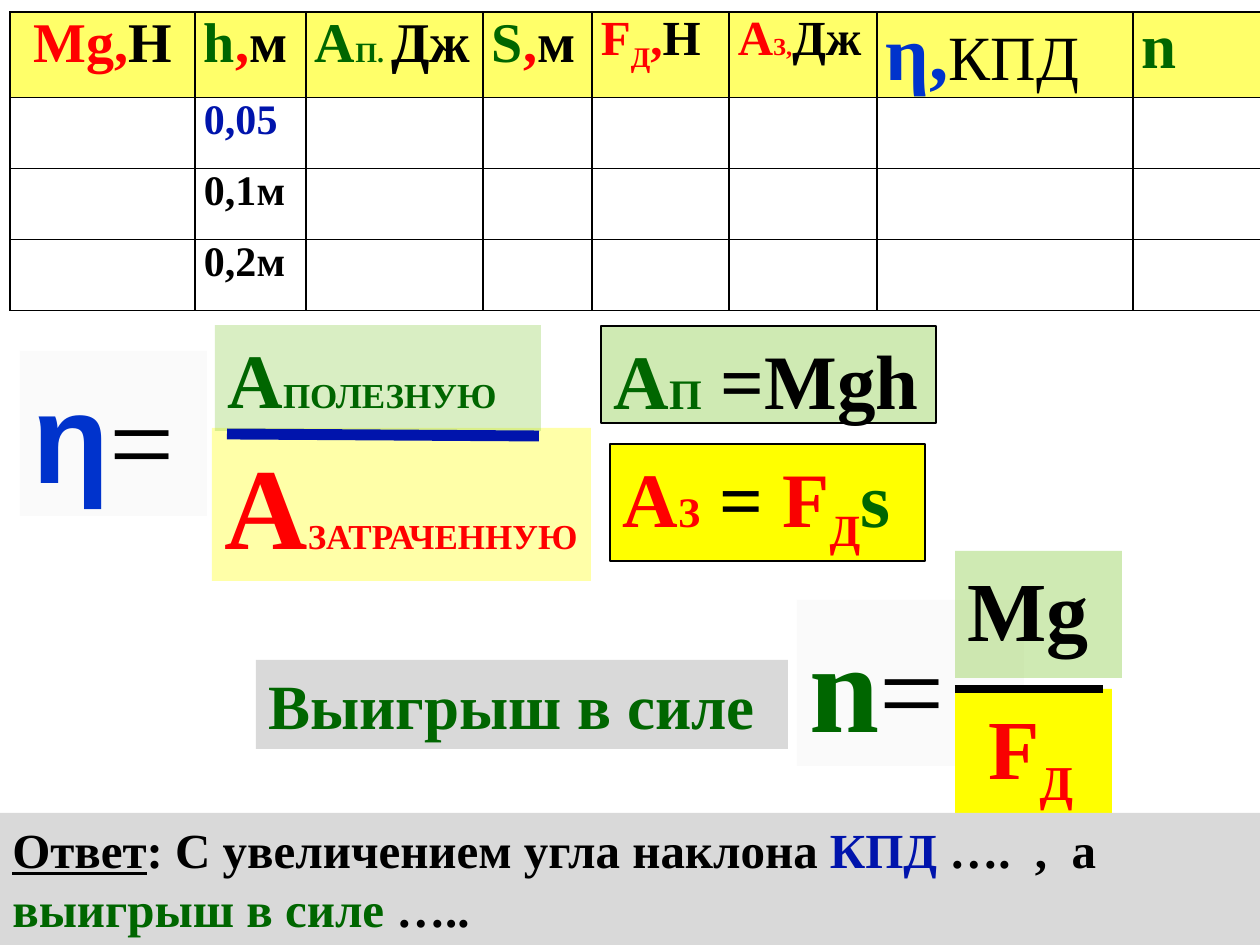
from lxml.etree import SubElement
from pptx import Presentation
from pptx.dml.color import RGBColor
from pptx.enum.shapes import MSO_CONNECTOR, MSO_SHAPE
from pptx.enum.text import MSO_ANCHOR, PP_ALIGN
from pptx.oxml.ns import qn
from pptx.util import Pt

SERIF = "Times New Roman"
RED, GREEN, BLUE, BLACK = "FF0000", "006600", "0014AC", "000000"
SKY, YELLOW, LIME, GREY, PALE = "0033CC", "FFFF00", "92D050", "D9D9D9", "F2F2F2"

# Run: text, size, colour, then optional style marks
COLS = [185, 111, 177, 109, 137, 148, 256, 128]
ROWS = [69, 71, 71, 71]
HEAD = [
    [("Mg,", 32, RED), ("Н", 32, BLACK)],
    [("h", 32, GREEN), (",", 32, RED), ("м", 32, BLACK)],
    [("A", 32, GREEN), ("П. ", 16, GREEN), ("Дж", 32, BLACK)],
    [("S", 32, GREEN), (",", 32, RED), ("м", 32, BLACK)],
    [("F", 28, RED), ("Д", 28, RED, "sub"), (",", 28, RED), ("Н", 28, BLACK)],
    [("A", 28, RED), ("З,", 14, RED), ("Дж", 28, BLACK)],
    [("η,", 44, SKY), ("КПД", 36, BLACK, "thin")],
    [("n", 36, GREEN)],
]
HEIGHTS = [("0,05", 24, BLUE), ("0,1м", 24, BLACK), ("0,2м", 24, BLACK)]

# Box: left, top, width, height, fill, opacity %, outlined, runs
BACK = [
    (20, 351, 187, 165, PALE, 34, False,
     [("η", 72, SKY, "sans"), ("=", 66, BLACK, "thin")]),
    (212, 428, 379, 153, YELLOW, 34, False,
     [("А", 66, RED), ("ЗАТРАЧЕННУЮ", 20, RED)]),
    (215, 325, 326, 106, LIME, 34, False,
     [("А", 44, GREEN), ("ПОЛЕЗНУЮ", 20, GREEN)]),
    (797, 600, 227, 166, PALE, 34, False,
     [("n", 72, GREEN), ("=", 66, BLACK, "thin")]),
    (955, 689, 157, 127, YELLOW, 100, False,
     [(" ", 48, BLACK), ("F", 48, "F90101"), ("Д", 48, RED, "sub")]),
    (955, 551, 167, 127, LIME, 43, False, [("Mg", 48, BLACK)]),
    (0, 813, 1260, 132, GREY, 100, False,
     [("Ответ", 28, BLACK, "line"), (": С увеличением угла наклона ", 28, BLACK),
      ("КПД", 28, BLUE), (" ….  ,  а ", 28, BLACK),
      ("выигрыш в силе ", 28, GREEN), ("…..", 28, BLACK)]),
    (610, 444, 315, 117, YELLOW, 100, True,
     [("A", 44, RED), ("З", 24, RED), (" = ", 44, BLACK), ("F", 44, "F90101"),
      ("Д", 44, RED, "sub"), ("s", 44, GREEN)]),
    (601, 326, 335, 97, LIME, 43, True,
     [("A", 44, GREEN), ("П", 24, GREEN), (" =Mgh", 44, BLACK)]),
    (256, 660, 532, 89, GREY, 100, False, [("Выигрыш в силе", 36, GREEN)]),
]
# Bar: from x, y, to x, y, colour, points
BARS = [(227, 434, 539, 436, BLUE, 6.25), (955, 689, 1103, 689, BLACK, 4.5)]


def px(n):
    return round(n * 914400 / 126)


def tint(fill, hue, alpha=100):
    fill.solid()
    fill.fore_color.rgb = RGBColor.from_string(hue)
    if alpha < 100:
        clr = fill._xPr.find(".//" + qn("a:srgbClr"))
        SubElement(clr, qn("a:alpha"), val=str(alpha * 1000))


def write(frame, runs):
    para = frame.paragraphs[0]
    for text, size, hue, *marks in runs:
        run = para.add_run()
        run.text = text
        font = run.font
        font.size = Pt(size)
        font.name = "Arial" if "sans" in marks else SERIF
        font.bold = "thin" not in marks
        font.underline = "line" in marks
        tint(font.fill, hue)
        if "sub" in marks:
            font._element.set("baseline", "-25000")
    return para


def edge(cell):
    props = cell._tc.get_or_add_tcPr()
    for i, side in enumerate(("lnL", "lnR", "lnT", "lnB")):
        line = props.makeelement(qn("a:" + side), {"w": str(Pt(1))})
        fill = SubElement(line, qn("a:solidFill"))
        SubElement(fill, qn("a:srgbClr"), val=BLACK)
        props.insert(i, line)


def draw_box(shapes, left, top, wide, high, hue, alpha, lined, runs):
    box = shapes.add_shape(MSO_SHAPE.RECTANGLE, *map(px, (left, top, wide, high)))
    box.shadow.inherit = False
    tint(box.fill, hue, alpha)
    if lined:
        tint(box.line.fill, BLACK)
        box.line.width = Pt(0.75)
    else:
        box.line.fill.background()
    frame = box.text_frame
    frame.word_wrap = True
    frame.vertical_anchor = MSO_ANCHOR.TOP
    write(frame, runs).alignment = PP_ALIGN.LEFT


def draw_bar(shapes, x1, y1, x2, y2, hue, width):
    bar = shapes.add_connector(MSO_CONNECTOR.STRAIGHT, *map(px, (x1, y1, x2, y2)))
    tint(bar.line.fill, hue)
    bar.line.width = Pt(width)
    SubElement(bar._element.spPr, qn("a:effectLst"))


def draw_table(shapes):
    table = shapes.add_table(len(ROWS), len(COLS), px(10), px(12),
                             px(sum(COLS)), px(sum(ROWS))).table
    for col, wide in zip(table.columns, COLS):
        col.width = px(wide)
    for row, high in zip(table.rows, ROWS):
        row.height = px(high)
    for cell in table.iter_cells():
        cell.margin_left = cell.margin_right = px(9)
        cell.margin_top = cell.margin_bottom = 0
        tint(cell.fill, "FFFFFF", 59)
        edge(cell)
    for c, runs in enumerate(HEAD):
        cell = table.cell(0, c)
        tint(cell.fill, YELLOW, 59)
        write(cell.text_frame, runs)
    table.cell(0, 0).text_frame.paragraphs[0].alignment = PP_ALIGN.CENTER
    for r, run in enumerate(HEIGHTS, 1):
        write(table.cell(r, 1).text_frame, [run])


def main():
    deck = Presentation()
    deck.slide_width, deck.slide_height = px(1260), px(945)
    shapes = deck.slides.add_slide(deck.slide_layouts[6]).shapes
    draw_table(shapes)
    # Fraction bars lie between the boxes they divide
    for i, box in enumerate(BACK):
        draw_box(shapes, *box)
        if i in (2, 6):
            draw_bar(shapes, *BARS[i // 6])
    deck.save("out.pptx")


if __name__ == "__main__":
    main()
